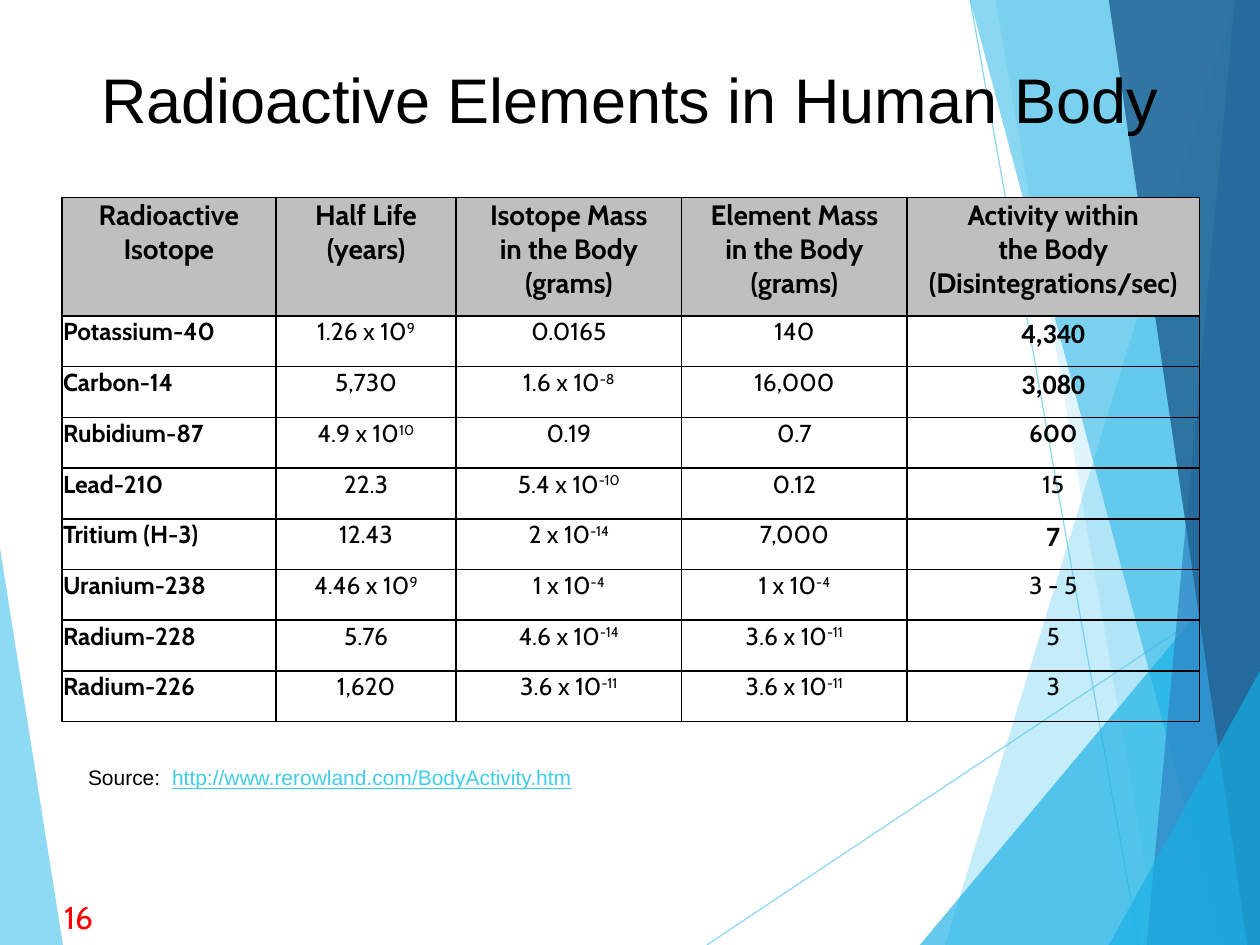
from dataclasses import dataclass, replace
from typing import NamedTuple

from lxml.etree import SubElement
from pptx import Presentation
from pptx.dml.color import RGBColor
from pptx.enum.shapes import MSO_CONNECTOR as CONN
from pptx.enum.text import MSO_ANCHOR as ANCHOR, PP_ALIGN as ALIGN
from pptx.oxml.ns import qn
from pptx.util import Inches, Pt

prs = Presentation()
prs.slide_width, prs.slide_height = Inches(10), Inches(7.5)
UNIT_X, UNIT_Y = prs.slide_width / 100, prs.slide_height / 100  # 1% of the slide


class Box(NamedTuple):
    """Left, top, width and height in percent of the slide."""
    x: float
    y: float
    w: float
    h: float

    def emu(self) -> tuple:
        return (int(self.x * UNIT_X), int(self.y * UNIT_Y),
                int(self.w * UNIT_X), int(self.h * UNIT_Y))


@dataclass(frozen=True)
class Style:
    size: float
    font: str = "Cabin"
    color: str = "000000"
    bold: bool = False
    underline: bool = False


class Facet(NamedTuple):
    color: str
    alpha: int
    points: tuple


class Ray(NamedTuple):
    start: tuple
    end: tuple


class Isotope(NamedTuple):
    name: str
    half_life: str
    isotope_mass: str
    element_mass: str
    activity: str
    activity_style: Style


TITLE = Style(36, "Arial")
HEAD = Style(16, bold=True)
BODY = Style(14)
STRONG = replace(BODY, bold=True)
HIGH = Style(16, "Calibri", bold=True)
SOURCE = Style(12, "Arial")
LINK = replace(SOURCE, color="3FCDE7", underline=True)
NUMBER = Style(18, color="FF0000")

# Points in percent of the slide
LEFT_FACET = Facet("5FCBEF", 70, ((0, 58.5), (4.9, 100), (0, 100)))
RAYS = [Ray((56.1, 100), (100, 61)), Ray((77, 0), (90.4, 100))]
RIGHT_FACETS = [
    Facet("5FCBEF", 36, ((97.5, 0), (75.4, 100), (100, 100), (100, 0))),
    Facet("5FCBEF", 20, ((78.8, 0), (91.9, 100), (100, 100), (100, 0))),
    Facet("17B0E4", 66, ((72.6, 100), (100, 57.2), (100, 100))),
    Facet("17B0E4", 50, ((76.7, 0), (97, 100), (100, 100), (100, 0))),
    Facet("2E83C3", 70, ((98.1, 0), (90.7, 100), (100, 100), (100, 0))),
    Facet("226292", 82, ((88.5, 0), (98.8, 100), (100, 100), (100, 0))),
    Facet("17B0E4", 66, ((88.2, 100), (100, 71.3), (100, 100))),
]

# A caret starts a superscript
COLUMNS = (17, 14.3, 17.9, 17.9, 23.2)
HEAD_ROW, BODY_ROW = 12.55, 5.37
HEADERS = ("Radioactive\nIsotope", "Half Life\n(years)",
           "Isotope Mass\nin the Body\n(grams)",
           "Element Mass\nin the Body\n(grams)",
           "Activity within\nthe Body\n(Disintegrations/sec)")
ISOTOPES = [
    Isotope("Potassium-40", "1.26 x 10^9", "0.0165", "140", "4,340", HIGH),
    Isotope("Carbon-14", "5,730", "1.6 x 10^-8", "16,000", "3,080", HIGH),
    Isotope("Rubidium-87", "4.9 x 10^10", "0.19", "0.7", "600", STRONG),
    Isotope("Lead-210", "22.3", "5.4 x 10^-10", "0.12", "15", BODY),
    Isotope("Tritium (H-3)", "12.43", "2 x 10^-14", "7,000", "7", HIGH),
    Isotope("Uranium-238", "4.46 x 10^9", "1 x 10^-4", "1 x 10^-4", "3 - 5", BODY),
    Isotope("Radium-228", "5.76", "4.6 x 10^-14", "3.6 x 10^-11", "5", BODY),
    Isotope("Radium-226", "1,620", "3.6 x 10^-11", "3.6 x 10^-11", "3", BODY),
]


def rgb(color: str) -> RGBColor:
    return RGBColor.from_string(color)


def set_alpha(fill, percent: int) -> None:
    """Make a solid fill partly transparent."""
    clr = fill._xPr.find(qn("a:solidFill"))[0]
    SubElement(clr, qn("a:alpha"), val=str(percent * 1000))


def add_run(p, text: str, style: Style):
    r = p.add_run()
    r.text = text
    f = r.font
    f.size, f.name, f.bold = Pt(style.size), style.font, style.bold
    f.underline = style.underline
    f.color.rgb = rgb(style.color)
    return r


def draw_facet(s, facet: Facet) -> None:
    first, *rest = facet.points
    builder = s.shapes.build_freeform(*first, scale=(UNIT_X, UNIT_Y))
    builder.add_line_segments(rest, close=True)
    sp = builder.convert_to_shape()
    sp.shadow.inherit = False
    sp.fill.solid()
    sp.fill.fore_color.rgb = rgb(facet.color)
    set_alpha(sp.fill, facet.alpha)
    sp.line.fill.background()


def draw_ray(s, ray: Ray) -> None:
    ends = Box(*ray.start, *ray.end).emu()
    line = s.shapes.add_connector(CONN.STRAIGHT, *ends)
    line.line.width = Pt(0.75)
    line.line.color.rgb = rgb("5FCBEF")
    set_alpha(line.line.fill, 70)
    SubElement(line._element.spPr, qn("a:effectLst"))


def draw_text(s, box: Box, *runs: tuple) -> None:
    tf = s.shapes.add_textbox(*box.emu()).text_frame
    tf.word_wrap = True
    for text, style in runs:
        add_run(tf.paragraphs[0], text, style)


def fill_cell(cell, text: str, style: Style, align=ALIGN.CENTER, fill: str = "") -> None:
    cell.margin_left = cell.margin_right = Inches(0.01)
    cell.margin_top = cell.margin_bottom = Inches(0.01)
    p = cell.text_frame.paragraphs[0]
    p.alignment, p.space_after = align, Pt(6)
    base, _, power = text.partition("^")
    for i, line in enumerate(base.split("\n")):
        if i:
            p.add_line_break()
        add_run(p, line, style)
    if power:
        add_run(p, power, style).font._element.set("baseline", "30000")
    # Borders come before the fill in the cell properties
    tcPr = cell._tc.get_or_add_tcPr()
    for side in ("lnL", "lnR", "lnT", "lnB"):
        ln = SubElement(tcPr, qn(f"a:{side}"), w=str(Pt(1)))
        SubElement(SubElement(ln, qn("a:solidFill")), qn("a:srgbClr"), val="000000")
    if fill:
        cell.fill.solid()
        cell.fill.fore_color.rgb = rgb(fill)
    else:
        cell.fill.background()


def draw_table(s, x: float, y: float) -> None:
    box = Box(x, y, sum(COLUMNS), HEAD_ROW + BODY_ROW * len(ISOTOPES))
    table = s.shapes.add_table(len(ISOTOPES) + 1, len(COLUMNS), *box.emu()).table
    table.first_row = table.horz_banding = False
    for column, width in zip(table.columns, COLUMNS):
        column.width = int(width * UNIT_X)
    for i, row in enumerate(table.rows):
        row.height = int((BODY_ROW if i else HEAD_ROW) * UNIT_Y)
    for c, text in enumerate(HEADERS):
        fill_cell(table.cell(0, c), text, HEAD, fill="BFBFBF")
    for i, (name, *masses, activity, style) in enumerate(ISOTOPES, 1):
        fill_cell(table.cell(i, 0), name, STRONG, ALIGN.LEFT)
        for c, text in enumerate(masses, 1):
            fill_cell(table.cell(i, c), text, BODY)
        fill_cell(table.cell(i, 4), activity, style)


def main() -> None:
    s = prs.slides.add_slide(prs.slide_layouts[5])

    # Background facets and rays
    draw_facet(s, LEFT_FACET)
    for ray in RAYS:
        draw_ray(s, ray)
    for facet in RIGHT_FACETS:
        draw_facet(s, facet)

    # Title, brought in front of the background
    title = s.shapes.title
    s.shapes._spTree.append(title._element)
    title.left, title.top, title.width, title.height = Box(6.9, 5.6, 86.2, 9.5).emu()
    tf = title.text_frame
    tf.vertical_anchor = ANCHOR.MIDDLE
    tf.paragraphs[0].alignment = ALIGN.CENTER
    add_run(tf.paragraphs[0], "Radioactive Elements in Human Body", TITLE)

    # Table, source and slide number
    draw_table(s, 4.9, 20.9)
    draw_text(s, Box(6, 80.3, 40.8, 4), ("Source:  ", SOURCE),
              ("http://www.rerowland.com/BodyActivity.htm", LINK))
    draw_text(s, Box(4.1, 94.4, 5.2, 5.3), ("16", NUMBER))

    prs.save("out.pptx")


if __name__ == "__main__":
    main()
